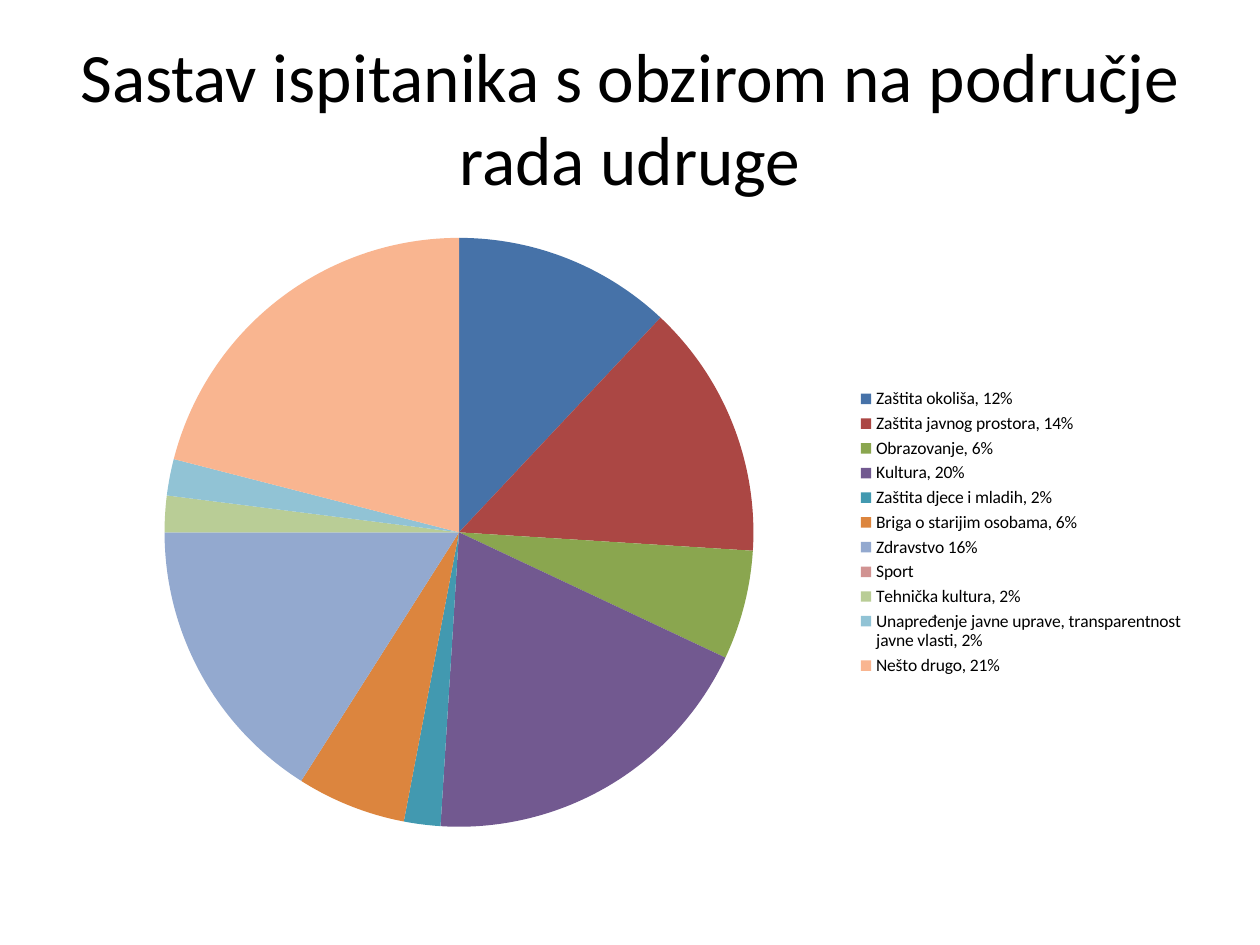
from pptx import Presentation
from pptx.chart.data import CategoryChartData as ChartData
from pptx.dml.color import RGBColor as RGB
from pptx.enum.chart import XL_CHART_TYPE as Kind, XL_LEGEND_POSITION as Side
from pptx.enum.text import MSO_ANCHOR as Anchor, PP_ALIGN as Align
from pptx.util import Inches, Pt

FONT = "Calibri"
COLORS = {
    "text": "000000",
    "blue": "4672A8", "red": "AB4744", "green": "8AA64F",
    "purple": "725990", "teal": "4299B0", "orange": "DC853E",
    "pale blue": "93A9CF", "pale red": "D19392", "pale green": "B9CD96",
    "pale teal": "91C3D5", "pale orange": "F9B590",
}
AREAS = [
    ("Zaštita okoliša, 12%", 12, "blue"),
    ("Zaštita javnog prostora, 14%", 14, "red"),
    ("Obrazovanje, 6%", 6, "green"),
    ("Kultura, 20%", 19, "purple"),
    ("Zaštita djece i mladih, 2%", 2, "teal"),
    ("Briga o starijim osobama, 6%", 6, "orange"),
    ("Zdravstvo 16%", 16, "pale blue"),
    ("Sport", None, "pale red"),
    ("Tehnička kultura, 2%", 2, "pale green"),
    ("Unapređenje javne uprave, transparentnost javne vlasti, 2%", 2, "pale teal"),
    ("Nešto drugo, 21%", 21, "pale orange"),
]


def style(font, size, color="text"):
    font.name, font.size, font.bold = FONT, Pt(size), False
    font.color.rgb = RGB.from_string(COLORS[color])


def write(shape, text, size=18, color="text", align=Align.CENTER, anchor=Anchor.MIDDLE):
    frame = shape.text_frame
    frame.word_wrap = True
    frame.vertical_anchor = anchor
    par = frame.paragraphs[0]
    par.alignment = align
    run = par.add_run()
    run.text = text
    style(run.font, size, color)


prs = Presentation()
prs.slide_width, prs.slide_height = Inches(10), Inches(7.5)
slide = prs.slides.add_slide(prs.slide_layouts[5])

title = slide.shapes.title
title.left, title.top = Inches(0.5), Inches(0.3)
title.width, title.height = Inches(9), Inches(1.25)
write(title, "Sastav ispitanika s obzirom na područje rada udruge", size=39.6)

data = ChartData()
data.categories = [name for name, _, _ in AREAS]
data.add_series("Series 1", [share for _, share, _ in AREAS])
chart = slide.shapes.add_chart(
    Kind.PIE, Inches(0.5), Inches(1.75), Inches(9), Inches(4.95), data
).chart
chart.has_title = False
style(chart.font, 10)

plot = chart.plots[0]
plot.vary_by_categories = True
for i, (_, _, color) in enumerate(AREAS):
    fill = plot.series[0].points[i].format.fill
    fill.solid()
    fill.fore_color.rgb = RGB.from_string(COLORS[color])

chart.has_legend = True
chart.legend.position = Side.RIGHT
chart.legend.include_in_layout = False

prs.save("out.pptx")
